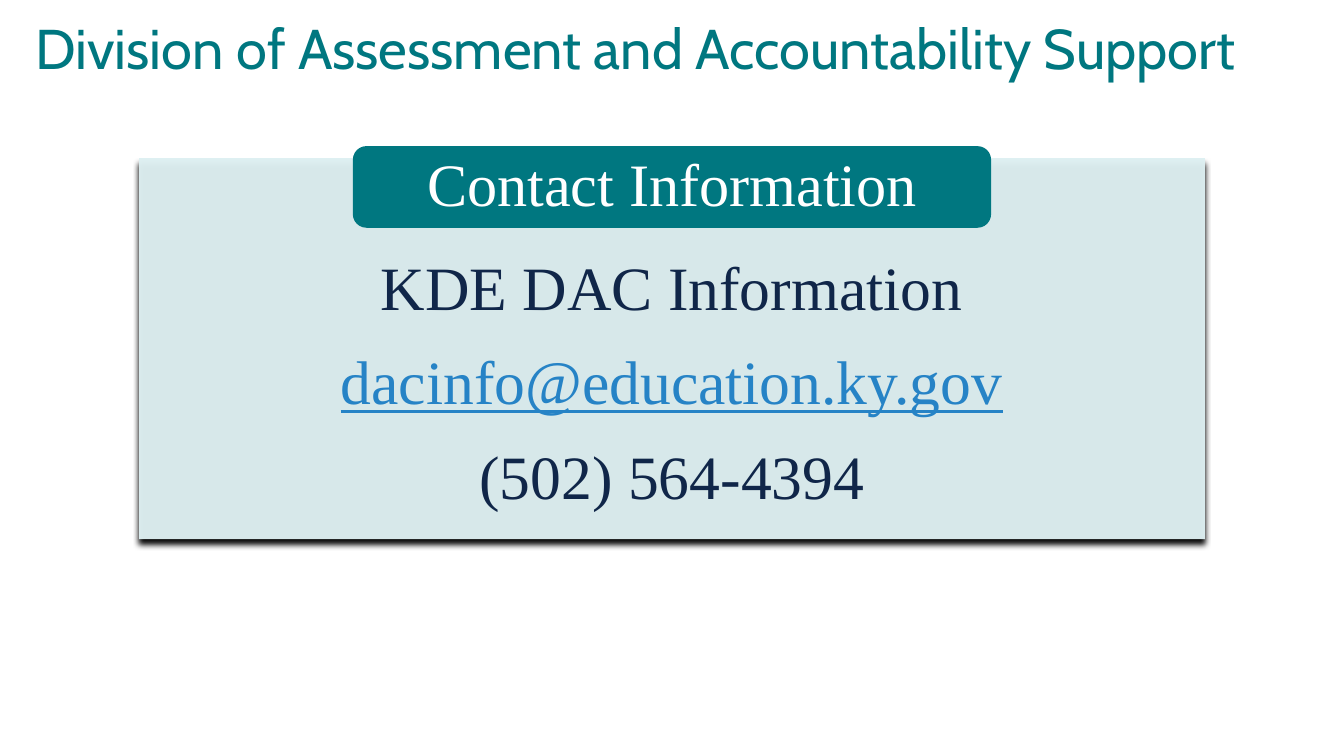
from dataclasses import dataclass

from lxml.etree import SubElement
from pptx import Presentation
from pptx.dml.color import RGBColor
from pptx.enum.shapes import MSO_SHAPE as Preset
from pptx.enum.text import MSO_ANCHOR as Anchor, MSO_AUTO_SIZE as AutoSize, PP_ALIGN as Align
from pptx.oxml.ns import qn
from pptx.shapes.autoshape import Shape
from pptx.slide import Slide
from pptx.text.text import TextFrame
from pptx.util import Inches, Pt

SLIDE_WIDTH, SLIDE_HEIGHT = Inches(13.33), Inches(7.5)
TEAL, NAVY, LINK_BLUE, PALE_TEAL, WHITE = "007780", "102649", "2683C6", "DEF0F2", "FFFFFF"
SERIF = "Times New Roman"


@dataclass(frozen=True)
class Line:
    text: str
    size: float
    color: str
    font: str = SERIF
    underline: bool = False
    align: Align = Align.CENTER
    before: float = 0
    after: float = 0


@dataclass(frozen=True)
class Card:
    preset: Preset
    top: float
    width: float
    height: float
    fill: str
    anchor: Anchor
    insets: tuple[float, float, float, float]
    lines: tuple[Line, ...]


def rgb(value: str) -> RGBColor:
    return RGBColor.from_string(value)


def share(percent: float, whole: int) -> int:
    return round(whole * percent / 100)


def write_lines(
    frame: TextFrame,
    lines: tuple[Line, ...],
    anchor: Anchor,
    insets: tuple[float, float, float, float],
) -> None:
    frame.word_wrap = True
    frame.auto_size = AutoSize.NONE
    frame.vertical_anchor = anchor
    frame.margin_left, frame.margin_top, frame.margin_right, frame.margin_bottom = map(Inches, insets)
    for index, line in enumerate(lines):
        paragraph = frame.add_paragraph() if index else frame.paragraphs[0]
        paragraph.alignment = line.align
        paragraph.line_spacing = 0.9
        paragraph.space_before = Pt(line.before)
        paragraph.space_after = Pt(line.after)
        run = paragraph.add_run()
        run.text = line.text
        run.font.name = line.font
        run.font.size = Pt(line.size)
        run.font.underline = line.underline
        run.font.color.rgb = rgb(line.color)


def draw_card(slide: Slide, card: Card) -> Shape:
    shape = slide.shapes.add_shape(
        card.preset,
        share((100 - card.width) / 2, SLIDE_WIDTH),
        share(card.top, SLIDE_HEIGHT),
        share(card.width, SLIDE_WIDTH),
        share(card.height, SLIDE_HEIGHT),
    )
    shape.shadow.inherit = False
    shape.fill.solid()
    shape.fill.fore_color.rgb = rgb(card.fill)
    shape.line.fill.background()
    write_lines(shape.text_frame, card.lines, card.anchor, card.insets)
    return shape


def add_depth(panel: Shape) -> None:
    properties = panel.element.spPr
    fill_color = properties.find(f"{qn('a:solidFill')}/{qn('a:srgbClr')}")
    SubElement(fill_color, qn("a:alpha"), val="97000")
    shadow = SubElement(
        properties.find(qn("a:effectLst")),
        qn("a:outerShdw"),
        blurRad=str(Pt(4)),
        dist=str(Pt(4)),
        dir="5400000",
        rotWithShape="0",
    )
    SubElement(shadow, qn("a:srgbClr"), val="000000")


HEADING = Line("Division of Assessment and Accountability Support", 40, TEAL, "Cabin", align=Align.LEFT)
CONTACT_PANEL = Card(
    Preset.RECTANGLE, 20.93, 79.3, 50.4, PALE_TEAL, Anchor.TOP, (0.82, 0.98, 0.82, 0.34),
    (
        Line("KDE DAC Information", 44, NAVY, after=8),
        Line("dacinfo@education.ky.gov", 44, LINK_BLUE, underline=True, before=12, after=8),
        Line("(502) 564-4394", 44, NAVY, before=12),
    ),
)
CONTACT_TAB = Card(
    Preset.ROUNDED_RECTANGLE, 19.33, 47.49, 10.8, TEAL, Anchor.MIDDLE, (0.32, 0, 0.32, 0),
    (Line("Contact Information", 43, WHITE),),
)


def main() -> None:
    deck = Presentation()
    deck.slide_width, deck.slide_height = SLIDE_WIDTH, SLIDE_HEIGHT
    slide = deck.slides.add_slide(deck.slide_layouts[5])
    heading = slide.shapes.title
    heading.left, heading.top = 0, 0
    heading.width, heading.height = SLIDE_WIDTH, share(13.6, SLIDE_HEIGHT)
    write_lines(heading.text_frame, (HEADING,), Anchor.MIDDLE, (0.35, 0.05, 0.1, 0.05))
    add_depth(draw_card(slide, CONTACT_PANEL))
    draw_card(slide, CONTACT_TAB)
    deck.save("out.pptx")


if __name__ == "__main__":
    main()
